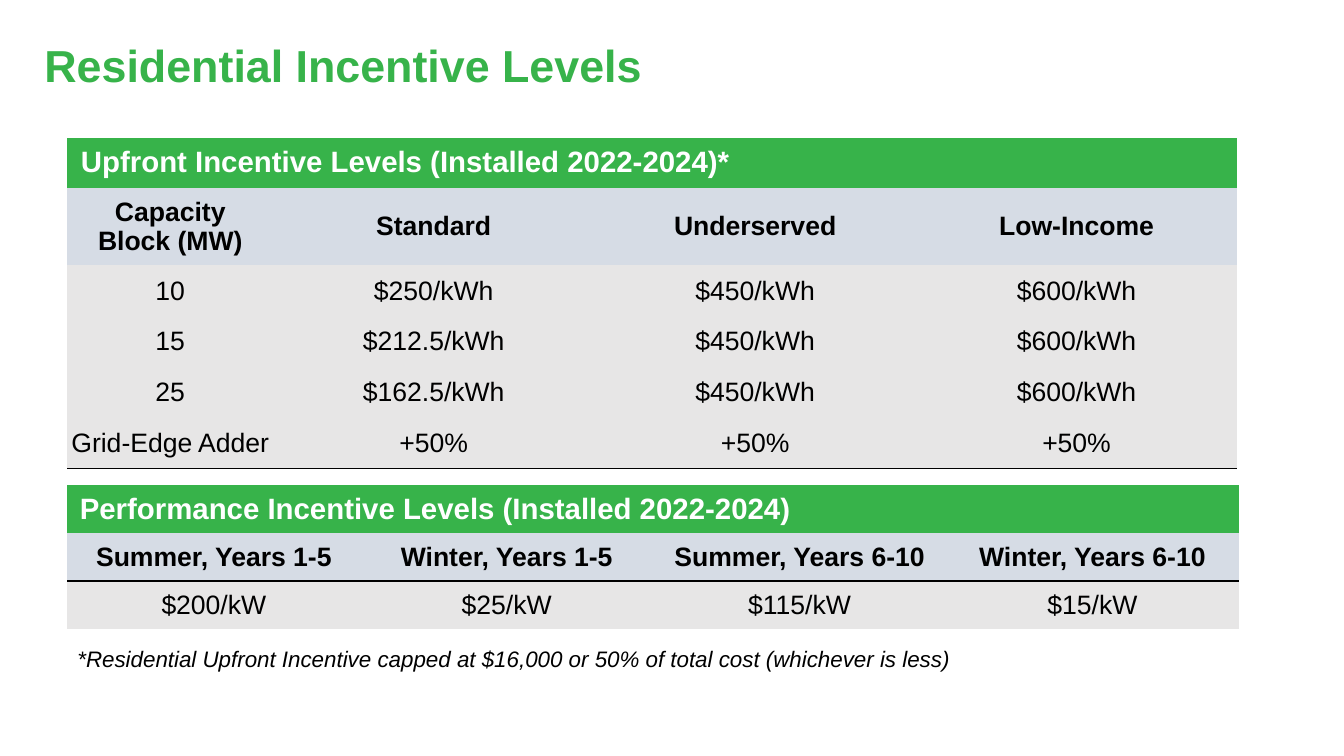
from lxml import etree
from pptx import Presentation
from pptx.dml.color import RGBColor
from pptx.enum.text import MSO_ANCHOR, PP_ALIGN
from pptx.oxml.ns import qn
from pptx.util import Cm, Pt

MIDDLE = MSO_ANCHOR.MIDDLE
TOP = MSO_ANCHOR.TOP
LEFT = PP_ALIGN.LEFT
CENTER = PP_ALIGN.CENTER

GREEN = RGBColor(0x37, 0xB3, 0x4A)
BLUE_GRAY = RGBColor(0xD6, 0xDC, 0xE5)
LIGHT_GRAY = RGBColor(0xE7, 0xE6, 0xE6)
WHITE = RGBColor(0xFF, 0xFF, 0xFF)
BLACK = RGBColor(0x00, 0x00, 0x00)

NO_GRID_STYLE = "{2D5ABB26-0587-4C30-8999-92F81FD0307C}"

UPFRONT_ROWS = [
    ["Upfront Incentive Levels (Installed 2022-2024)*"],
    ["Capacity Block (MW)", "Standard", "Underserved", "Low-Income"],
    ["10", "$250/kWh", "$450/kWh", "$600/kWh"],
    ["15", "$212.5/kWh", "$450/kWh", "$600/kWh"],
    ["25", "$162.5/kWh", "$450/kWh", "$600/kWh"],
    ["Grid-Edge Adder", "+50%", "+50%", "+50%"],
]
PERFORMANCE_ROWS = [
    ["Performance Incentive Levels (Installed 2022-2024)"],
    ["Summer, Years 1-5", "Winter, Years 1-5", "Summer, Years 6-10", "Winter, Years 6-10"],
    ["$200/kW", "$25/kW", "$115/kW", "$15/kW"],
]


class IncentiveSlide:
    font_name = "Arial"

    def __init__(self, presentation):
        self.slide = presentation.slides.add_slide(presentation.slide_layouts[6])

    def set_text(self, text_frame, text, size, color, bold=False, italic=False, alignment=LEFT):
        text_frame.text = text
        paragraph = text_frame.paragraphs[0]
        paragraph.alignment = alignment
        font = paragraph.runs[0].font
        font.name = self.font_name
        font.size = Pt(size)
        font.color.rgb = color
        font.bold = bold
        font.italic = italic

    def add_text(self, text, left, top, width, height, inset, anchor, **style):
        shape = self.slide.shapes.add_textbox(Cm(left), Cm(top), Cm(width), Cm(height))
        text_frame = shape.text_frame
        text_frame.word_wrap = True
        text_frame.vertical_anchor = anchor
        text_frame.margin_left = Cm(inset)
        self.set_text(text_frame, text, **style)

    def add_table(self, rows, left, top, widths, heights, inset, ruled_row):
        frame = self.slide.shapes.add_table(
            len(heights), len(widths), Cm(left), Cm(top), Cm(sum(widths)), Cm(sum(heights))
        )
        frame.element.find(".//" + qn("a:tableStyleId")).text = NO_GRID_STYLE
        table = frame.table
        for column, width in zip(table.columns, widths):
            column.width = Cm(width)
        for row, height in zip(table.rows, heights):
            row.height = Cm(height)
        table.cell(0, 0).merge(table.cell(0, len(widths) - 1))
        for row_index, texts in enumerate(rows):
            for column_index, text in enumerate(texts):
                self.fill_cell(table.cell(row_index, column_index), text, row_index, inset)
        self.rule_below(frame, ruled_row)

    def fill_cell(self, cell, text, row_index, inset):
        is_title = row_index == 0
        is_heading = row_index == 1
        cell.fill.solid()
        cell.fill.fore_color.rgb = GREEN if is_title else BLUE_GRAY if is_heading else LIGHT_GRAY
        cell.vertical_anchor = MIDDLE
        side = inset if is_title or is_heading else 0
        cell.margin_left = cell.margin_right = Cm(side)
        cell.margin_top = cell.margin_bottom = Cm(side / 2)
        self.set_text(
            cell.text_frame,
            text,
            size=21 if is_title else 19,
            color=WHITE if is_title else BLACK,
            bold=is_title or is_heading,
            alignment=LEFT if is_title else CENTER,
        )

    def rule_below(self, frame, row_index):
        table_row = list(frame.element.iter(qn("a:tr")))[row_index]
        for properties in table_row.iter(qn("a:tcPr")):
            line = etree.Element(qn("a:lnB"), w=str(Pt(1)))
            fill = etree.SubElement(line, qn("a:solidFill"))
            etree.SubElement(fill, qn("a:srgbClr"), val=str(BLACK))
            properties.insert(0, line)


def main():
    presentation = Presentation()
    presentation.slide_width = Cm(33.87)
    presentation.slide_height = Cm(19.05)
    page = IncentiveSlide(presentation)
    page.add_text(
        "Residential Incentive Levels", 0, 0.33, 29.21, 2.62,
        inset=1.12, anchor=MIDDLE, size=32, color=GREEN, bold=True,
    )
    page.add_table(
        UPFRONT_ROWS, 1.7, 3.47, [5.18] + [8.1] * 3, [1.26, 1.96] + [1.28] * 4,
        inset=0.34, ruled_row=5,
    )
    page.add_table(
        PERFORMANCE_ROWS, 1.7, 12.22, [7.38] * 4, [1.21] * 3,
        inset=0.31, ruled_row=1,
    )
    page.add_text(
        "*Residential Upfront Incentive capped at $16,000 or 50% of total cost (whichever is less)",
        1.7, 16.13, 29.24, 0.94,
        inset=0.25, anchor=TOP, size=16, color=BLACK, italic=True,
    )
    presentation.save("out.pptx")


if __name__ == "__main__":
    main()
